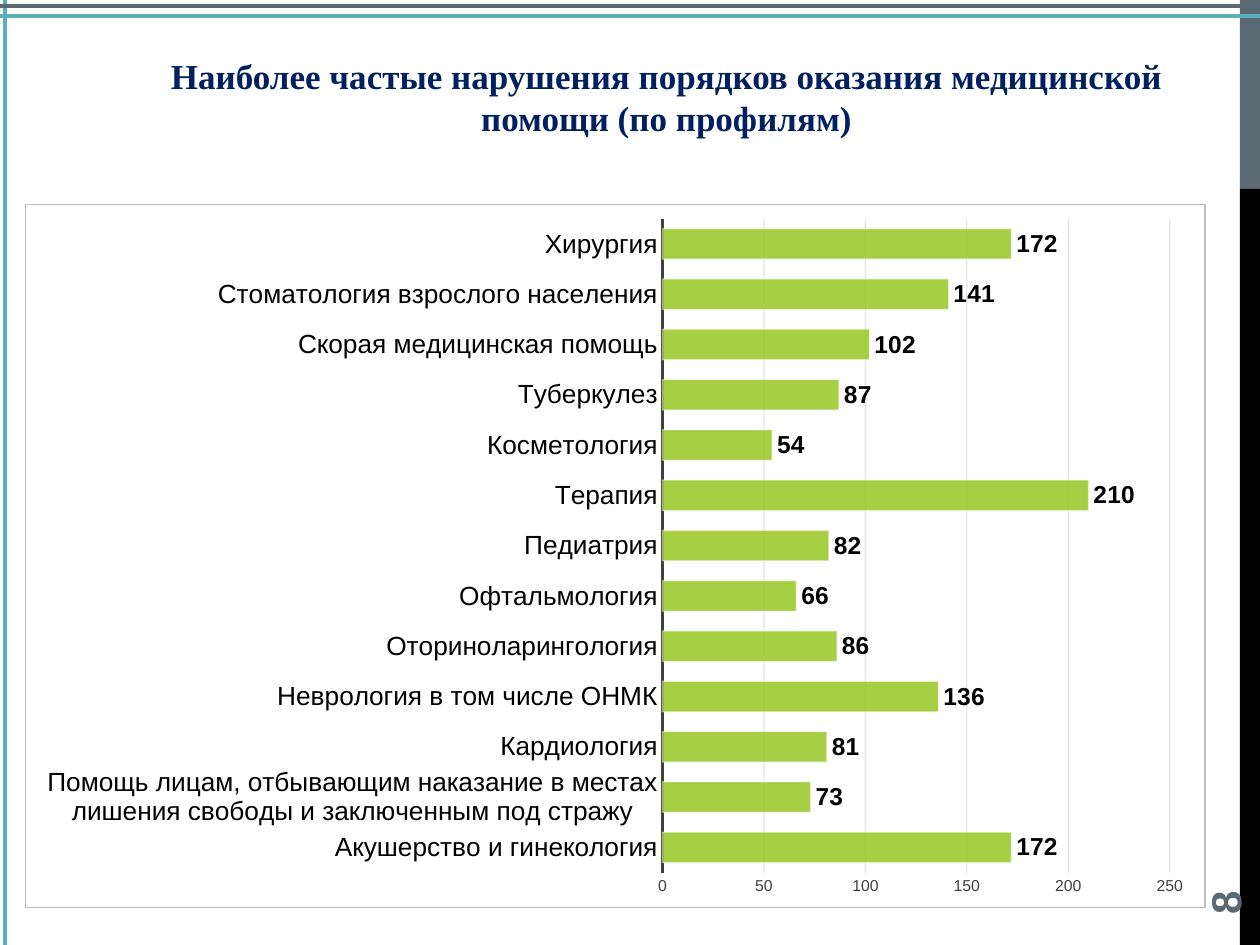
from pptx import Presentation
from pptx import util as u
from pptx.chart.data import CategoryChartData
from pptx.dml.color import RGBColor
from pptx.enum import chart as ch, shapes, text
from pptx.oxml import parse_xml
from pptx.oxml.ns import nsdecls
from pptx.oxml.xmlchemy import OxmlElement

PROFILES = {
    "Акушерство и гинекология": 172,
    "Помощь лицам, отбывающим наказание в местах лишения свободы и заключенным под стражу": 73,
    "Кардиология": 81,
    "Неврология в том числе ОНМК": 136,
    "Оториноларингология": 86,
    "Офтальмология": 66,
    "Педиатрия": 82,
    "Терапия": 210,
    "Косметология": 54,
    "Туберкулез": 87,
    "Скорая медицинская помощь": 102,
    "Стоматология взрослого населения": 141,
    "Хирургия": 172,
}


def colour(value):
    return RGBColor.from_string(value)


def assign(target, values):
    for name, value in values.items():
        setattr(target, name, value)


class SlideBuilder:
    """Holds the deck style and the current slide, and draws its elements."""

    teal, slate, navy, black, white = "59B0B9", "5B6973", "002060", "000000", "FFFFFF"
    bar, axis, grid, frame = "98C723", "404040", "0D0D0D", "BFBFBF"
    body, heading = "Arial", "Times New Roman"

    def __init__(self, deck):
        self.slide = deck.slides.add_slide(deck.slide_layouts[6])

    def font(self, font, size, hex_value, name=body, bold=False):
        assign(font, {"size": u.Pt(size), "name": name, "bold": bold})
        font.color.rgb = colour(hex_value)

    def stroke(self, line, hex_value, width):
        line.color.rgb = colour(hex_value)
        line.width = u.Pt(width)

    def rectangle(self, place, fill, line=None):
        box = self.slide.shapes.add_shape(
            shapes.MSO_SHAPE.RECTANGLE, *map(u.Inches, place))
        box.shadow.inherit = False
        box.fill.solid()
        box.fill.fore_color.rgb = colour(fill)
        if line:
            self.stroke(box.line, line, 0.75)
        else:
            box.line.fill.background()
        return box

    def rule(self, ends, hex_value):
        line = self.slide.shapes.add_connector(
            shapes.MSO_CONNECTOR.STRAIGHT, *map(u.Inches, ends))
        self.stroke(line.line, hex_value, 2.25)
        line.element.spPr.append(OxmlElement("a:effectLst"))

    def add_words(self, box, words, align, **style):
        assign(box.text_frame, {
            "word_wrap": True, "vertical_anchor": text.MSO_ANCHOR.MIDDLE})
        para = box.text_frame.paragraphs[0]
        para.alignment = align
        span = para.add_run()
        span.text = words
        self.font(span.font, bold=True, **style)

    def title(self, place, words):
        box = self.rectangle(place, self.white, self.white)
        self.add_words(box, words, text.PP_ALIGN.CENTER,
                       size=20, hex_value=self.navy, name=self.heading)

    def page_number(self, place, number):
        box = self.slide.shapes.add_textbox(*map(u.Inches, place))
        box.rotation = 270
        self.add_words(box, number, text.PP_ALIGN.LEFT, size=24, hex_value=self.slate)

    def bar_chart(self, place, values):
        data = CategoryChartData()
        data.categories = list(values)
        data.add_series("Series 1", list(values.values()))
        chart = self.slide.shapes.add_chart(
            ch.XL_CHART_TYPE.BAR_CLUSTERED, *map(u.Inches, place), data).chart
        assign(chart, {"has_legend": False, "has_title": False})
        self.font(chart.font, 10, self.black)

        plot = chart.plots[0]
        assign(plot, {"gap_width": 65, "vary_by_categories": False,
                      "has_data_labels": True})
        assign(plot.data_labels, {"show_value": True,
                                  "position": ch.XL_LABEL_POSITION.OUTSIDE_END})
        self.font(plot.data_labels.font, 14, self.black, bold=True)
        bars = plot.series[0].format
        bars.fill.solid()
        bars.fill.fore_color.rgb = colour(self.bar)
        self.stroke(bars.line, self.white, 0.75)

        categories, scale = chart.category_axis, chart.value_axis
        for axis, size, hex_value in ((categories, 15, self.black), (scale, 9, self.axis)):
            assign(axis, {"major_tick_mark": ch.XL_TICK_MARK.NONE,
                          "minor_tick_mark": ch.XL_TICK_MARK.NONE})
            self.font(axis.tick_labels.font, size, hex_value)
        categories.has_major_gridlines = False
        self.stroke(categories.format.line, self.axis, 1.5)
        assign(scale, {"minimum_scale": 0, "maximum_scale": 250,
                       "major_unit": 50, "has_major_gridlines": True})
        scale.format.line.fill.background()
        self.stroke(scale.major_gridlines.format.line, self.grid, 0.75)

        self.fade(chart, "c:ser/c:spPr/a:solidFill", 85)
        self.fade(chart, "c:ser/c:spPr/a:ln", 50)
        self.fade(chart, "c:majorGridlines", 10)
        self.frame_chart(chart)
        self.place_plot(chart, x=0.54, y=0.02, w=0.43, h=0.93)

    def fade(self, chart, part, percent):
        for tint in chart.element.xpath(f".//{part}//a:srgbClr"):
            alpha = OxmlElement("a:alpha")
            alpha.set("val", str(percent * 1000))
            tint.append(alpha)

    def frame_chart(self, chart):
        chart.element.xpath("c:chart")[0].addnext(parse_xml(
            f'<c:spPr {nsdecls("c", "a")}>'
            f'<a:solidFill><a:srgbClr val="{self.white}"/></a:solidFill>'
            f'<a:ln w="{u.Pt(0.75)}"><a:solidFill><a:srgbClr val="{self.frame}"/>'
            '</a:solidFill></a:ln></c:spPr>'))

    def place_plot(self, chart, **shares):
        area = chart.element.xpath("c:chart/c:plotArea")[0]
        for old in area.xpath("c:layout"):
            area.remove(old)
        modes = {"layoutTarget": "inner", "xMode": "edge", "yMode": "edge"}
        parts = "".join(f'<c:{name} val="{value}"/>'
                        for name, value in {**modes, **shares}.items())
        area.insert(0, parse_xml(
            f'<c:layout {nsdecls("c")}><c:manualLayout>{parts}'
            '</c:manualLayout></c:layout>'))


def main():
    deck = Presentation()
    assign(deck, {"slide_width": u.Inches(10), "slide_height": u.Inches(7.5)})
    page = SlideBuilder(deck)
    page.rectangle((9.84, 0, 0.16, 1.5), page.slate)
    page.rectangle((9.84, 1.5, 0.16, 6), page.black)
    page.rule((10, 0.13, 0, 0.13), page.teal)
    page.rule((0.04, 0, 0.04, 7.5), page.teal)
    page.rule((0, 0.05, 10, 0.05), page.slate)
    page.page_number((9, 6.44, 1.44, 0.4), "8")
    page.title((0.78, 0.29, 9.02, 0.95),
               "Наиболее частые нарушения порядков оказания медицинской "
               "помощи (по профилям)")
    page.bar_chart((0.2, 1.62, 9.37, 5.59), PROFILES)
    deck.save("out.pptx")


if __name__ == "__main__":
    main()
